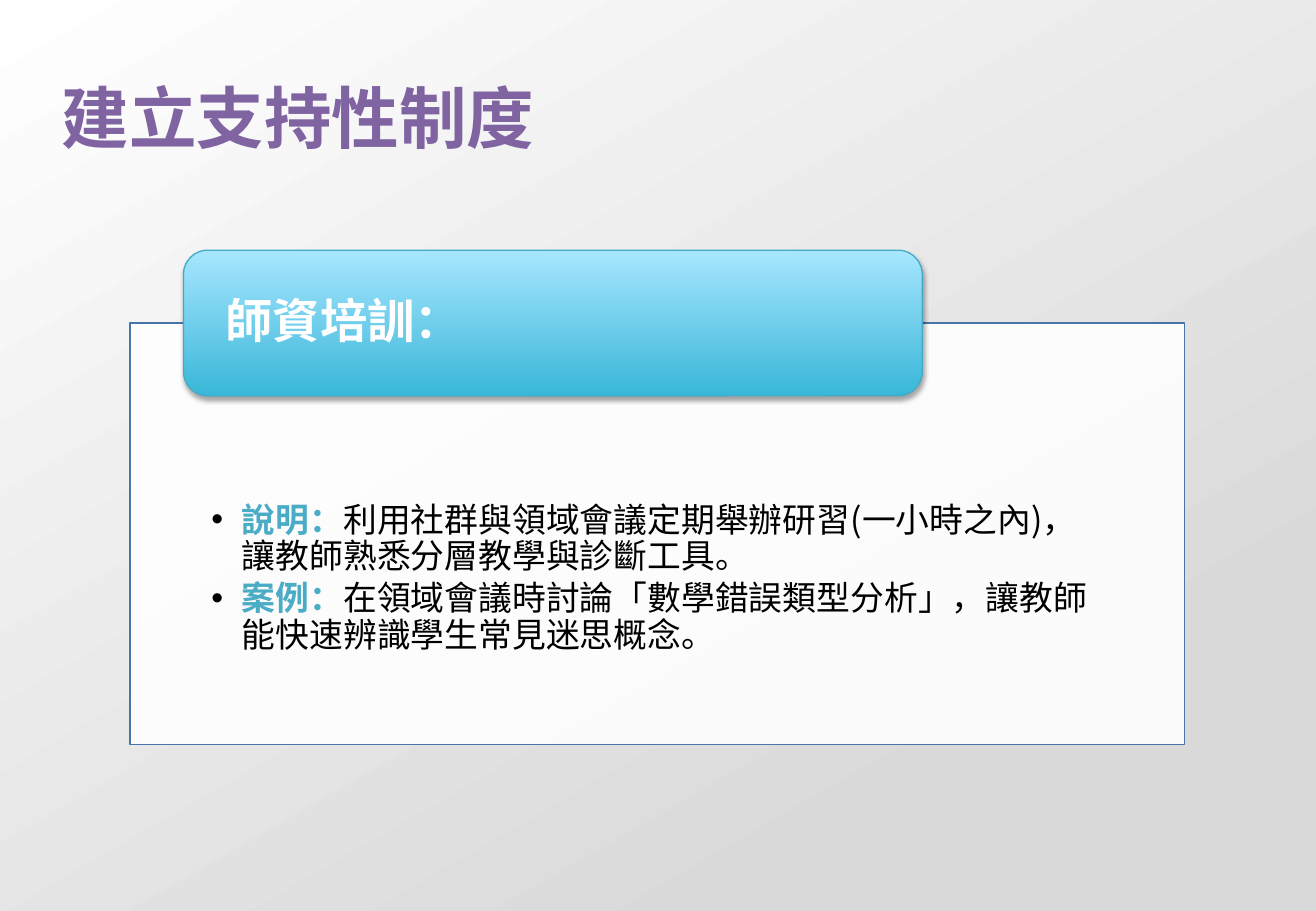
from pptx import Presentation
from pptx.dml.color import RGBColor
from pptx.enum.shapes import MSO_SHAPE as Shape
from pptx.enum.text import MSO_ANCHOR as Anchor, MSO_AUTO_SIZE as Fit, PP_ALIGN as Align
from pptx.oxml.ns import qn
from pptx.oxml.xmlchemy import OxmlElement as Node
from pptx.util import Inches, Pt

FONT = "Noto Sans CJK SC"
WHITE = RGBColor(0xFF, 0xFF, 0xFF)
BLACK = RGBColor(0, 0, 0)
GRAY = RGBColor(0xD9, 0xD9, 0xD9)
PURPLE = RGBColor(0x80, 0x64, 0xA2)
TEAL = RGBColor(0x4B, 0xAC, 0xC6)
SKY = RGBColor(0xA7, 0xE6, 0xFF)
CYAN = RGBColor(0x39, 0xB7, 0xD8)
BLUE = RGBColor(0x48, 0x75, 0xAC)
EDGE = RGBColor(0x46, 0xAA, 0xC5)

TITLE = "建立支持性制度"
HEAD = "師資培訓："
ITEMS = [
    ("說明：", "利用社群與領域會議定期舉辦研習(一小時之內)，讓教師熟悉分層教學與診斷工具。"),
    ("案例：", "在領域會議時討論「數學錯誤類型分析」，讓教師能快速辨識學生常見迷思概念。"),
]


def add(parent, tag, **attrs):
    """Append a DrawingML child element and return it."""
    node = Node(tag)
    for key, value in attrs.items():
        node.set(key, str(value))
    parent.append(node)
    return node


def blend(fill, first, last, angle, end=1.0):
    """Fill with two colours; the angle runs counter-clockwise."""
    fill.gradient()
    fill.gradient_angle = angle
    for stop, color, place in zip(fill.gradient_stops, (first, last), (0, end)):
        stop.color.rgb = color
        stop.position = place


class Deck:
    def __init__(self, width, height):
        self.prs = Presentation()
        self.prs.slide_width = Inches(width)
        self.prs.slide_height = Inches(height)
        self.slide = self.prs.slides.add_slide(self.prs.slide_layouts[1])
        blend(self.slide.background.fill, WHITE, GRAY, 300, 0.8)

    def place(self, shape, box):
        shape.left, shape.top, shape.width, shape.height = map(Inches, box)

    def frame(self, shape, insets, anchor):
        text = shape.text_frame
        text.word_wrap = True
        text.auto_size = Fit.NONE
        text.vertical_anchor = anchor
        (text.margin_left, text.margin_top,
         text.margin_right, text.margin_bottom) = map(Inches, insets)
        return text

    def style(self, para, size, color, bold):
        para.alignment = Align.LEFT
        font = para.font
        font.size, font.bold, font.name = Pt(size), bold, FONT
        font.color.rgb = color
        add(para._p.pPr.find(qn("a:defRPr")), "a:ea", typeface=FONT)

    def outline(self, shape, color):
        shape.line.color.rgb = color
        shape.line.width = Pt(0.75)

    def title(self, words, box):
        shape = self.slide.shapes.title
        self.place(shape, box)
        para = self.frame(shape, (0, 0, 0, 0), Anchor.TOP).paragraphs[0]
        para.text = words
        self.style(para, 40, PURPLE, True)

    def panel(self, items, box):
        shape = self.slide.placeholders[1]
        self.place(shape, box)
        shape.fill.solid()
        shape.fill.fore_color.rgb = WHITE
        add(shape.element.spPr.find(".//" + qn("a:srgbClr")), "a:alpha", val=90000)
        self.outline(shape, BLUE)
        text = self.frame(shape, (0.67, 1.48, 0.67, 0.16), Anchor.TOP)
        for i, (label, words) in enumerate(items):
            para = text.add_paragraph() if i else text.paragraphs[0]
            self.bullet(para)
            self.style(para, 20, BLACK, False)
            run = para.add_run()
            run.text = label
            run.font.bold = True
            run.font.color.rgb = TEAL
            para.add_run().text = words

    def bullet(self, para):
        para.line_spacing = 0.9
        para.space_before = Pt(0)
        para.space_after = Pt(3.6)
        props = para._p.get_or_add_pPr()
        props.set("marL", str(Inches(0.25)))
        props.set("indent", str(-Inches(0.25)))
        add(add(props, "a:buClr"), "a:srgbClr", val=BLACK)
        add(props, "a:buChar", char="•")

    def banner(self, words, box):
        shape = self.slide.shapes.add_shape(Shape.ROUNDED_RECTANGLE, *map(Inches, box))
        blend(shape.fill, CYAN, SKY, 90)
        self.outline(shape, EDGE)
        self.shade(shape)
        para = self.frame(shape, (0.29, 0, 0.29, 0), Anchor.MIDDLE).paragraphs[0]
        para.text = words
        para.line_spacing = 0.9
        self.style(para, 28, WHITE, True)

    def shade(self, shape):
        """Give the shape a soft shadow below it."""
        shape.shadow.inherit = False
        effects = shape.element.spPr.find(qn("a:effectLst"))
        outer = add(effects, "a:outerShdw", blurRad=Pt(3.1), dist=Pt(1.8),
                    dir=90 * 60000, rotWithShape=0)
        add(add(outer, "a:srgbClr", val=BLACK), "a:alpha", val=35000)


def main():
    deck = Deck(10.83, 7.5)
    deck.title(TITLE, (0.51, 0.63, 10.31, 0.67))
    deck.panel(ITEMS, (1.07, 2.66, 8.68, 3.47))
    deck.banner(HEAD, (1.51, 2.06, 6.08, 1.2))
    deck.prs.save("out.pptx")


if __name__ == "__main__":
    main()
